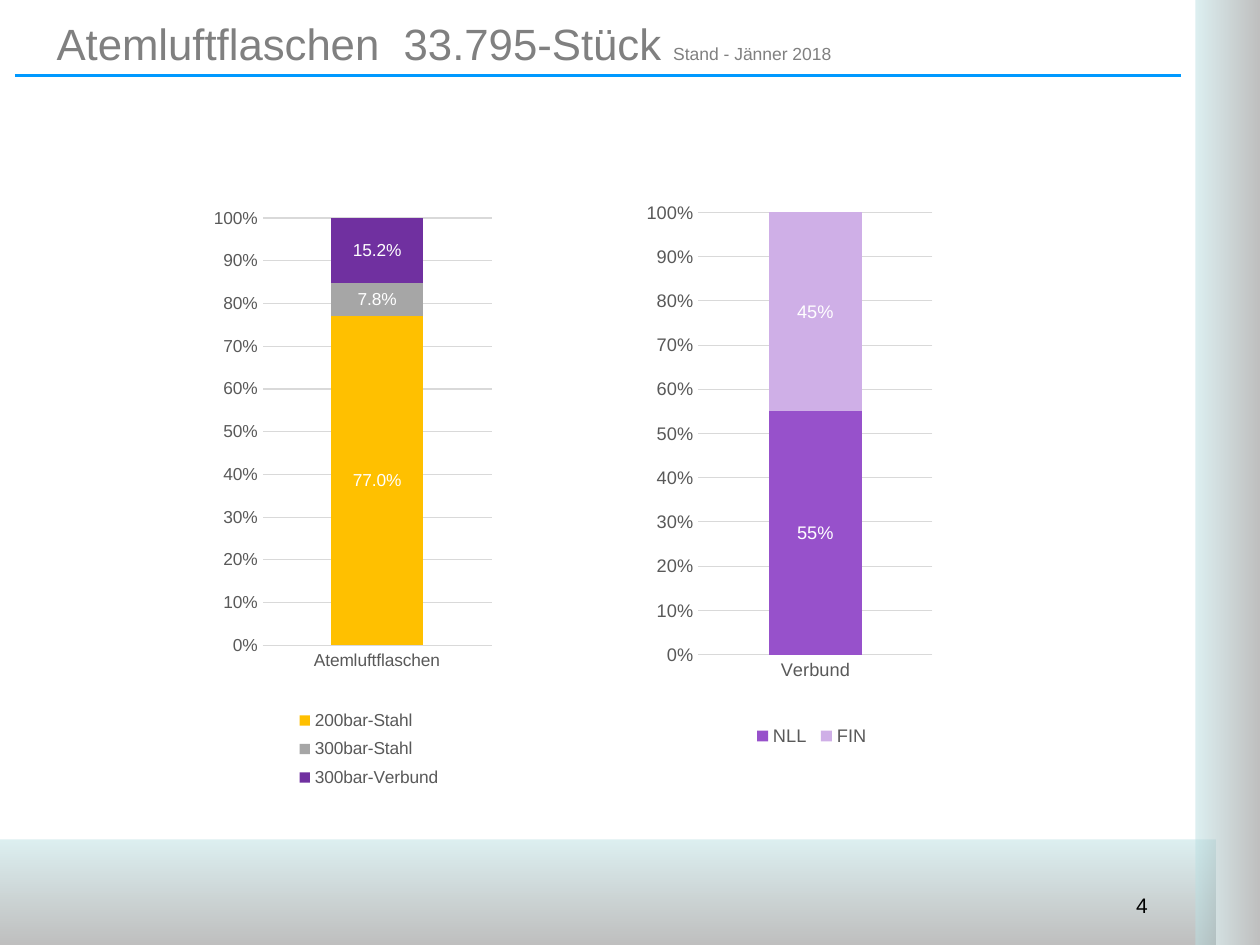
from lxml import etree
from pptx import Presentation, util as u
from pptx.chart.data import CategoryChartData
from pptx.dml.color import RGBColor
from pptx.enum import chart as ch, shapes, text
from pptx.oxml import parse_xml
from pptx.oxml.ns import nsdecls, qn

COLORS = {
    "mist": "BBE0E3", "gray": "808080", "blue": "0099FF", "black": "000000",
    "white": "FFFFFF", "label": "595959", "grid": "D9D9D9",
    "yellow": "FFC000", "silver": "A6A6A6", "purple": "7030A0",
    "violet": "9751CB", "lilac": "CFAFE7",
}


def rgb(name):
    return RGBColor.from_string(COLORS[name])


def layout_xml(x, y, w, h, inner=False):
    target = '<c:layoutTarget val="inner"/>' if inner else ""
    return parse_xml(
        f'<c:layout {nsdecls("c")}><c:manualLayout>{target}'
        '<c:xMode val="edge"/><c:yMode val="edge"/>'
        f'<c:x val="{x}"/><c:y val="{y}"/><c:w val="{w}"/><c:h val="{h}"/>'
        "</c:manualLayout></c:layout>")


def place(element, layout, index):
    for old in element.findall(qn("c:layout")):
        element.remove(old)
    element.insert(index, layout)


class SlideBuilder:
    """Holds the style and the current slide; boxes are given in cm."""

    font_name = "Arial"

    def __init__(self, slide):
        self.s = slide

    def style(self, font, size, color):
        font.name, font.size = self.font_name, u.Pt(size)
        font.color.rgb = rgb(color)

    def band(self, box, angle):
        sp = self.s.shapes.add_shape(shapes.MSO_SHAPE.RECTANGLE, *map(u.Cm, box))
        sp.shadow.inherit = False
        sp.line.fill.background()
        sp.fill.gradient()
        sp.fill.gradient_angle = angle
        for stop, color in zip(sp.fill.gradient_stops, ("mist", "gray")):
            stop.color.rgb = rgb(color)
        for clr in sp._element.spPr.iter(qn("a:srgbClr")):
            etree.SubElement(clr, qn("a:alpha")).set("val", "49000")

    def text(self, box, runs, color, align=text.PP_ALIGN.LEFT,
             anchor=text.MSO_ANCHOR.TOP):
        tf = self.s.shapes.add_textbox(*map(u.Cm, box)).text_frame
        tf.word_wrap = True
        tf.vertical_anchor = anchor
        p = tf.paragraphs[0]
        p.alignment = align
        for words, size in runs:
            r = p.add_run()
            r.text = words
            self.style(r.font, size, color)

    def rule(self, x1, x2, y, color, width):
        line = self.s.shapes.add_connector(
            shapes.MSO_CONNECTOR.STRAIGHT, u.Cm(x1), u.Cm(y), u.Cm(x2), u.Cm(y))
        line.line.color.rgb = rgb(color)
        line.line.width = u.Pt(width)
        etree.SubElement(line._element.spPr, qn("a:effectLst"))

    def chart(self, box, category, series, size, label_format, plot_box, legend_box):
        data = CategoryChartData(number_format=label_format)
        data.categories = [category]
        for name, value, _ in series:
            data.add_series(name, [value])
        chart = self.s.shapes.add_chart(
            ch.XL_CHART_TYPE.COLUMN_STACKED_100, *map(u.Cm, box), data).chart
        self.style(chart.font, size, "label")
        chart.has_title = False

        # Axes
        cat, val = chart.category_axis, chart.value_axis
        for axis in (cat, val):
            axis.major_tick_mark = axis.minor_tick_mark = ch.XL_TICK_MARK.NONE
            self.style(axis.tick_labels.font, size, "label")
        val.minimum_scale, val.maximum_scale, val.major_unit = 0, 1, 0.1
        val.tick_labels.number_format = "0%"
        val.tick_labels.number_format_is_linked = False
        val.format.line.fill.background()
        for line in (cat.format.line, val.major_gridlines.format.line):
            line.color.rgb = rgb("grid")
            line.width = u.Pt(0.65)

        # Columns and their values
        plot = chart.plots[0]
        plot.gap_width, plot.overlap, plot.vary_by_categories = 150, 100, False
        for ser, (_, _, color) in zip(plot.series, series):
            ser.format.fill.solid()
            ser.format.fill.fore_color.rgb = rgb(color)
            labels = ser.data_labels
            labels.show_value = True
            labels.number_format = label_format
            labels.number_format_is_linked = False
            self.style(labels.font, size, "white")

        # Legend and positions
        chart.has_legend = True
        legend = chart.legend
        legend.position = ch.XL_LEGEND_POSITION.BOTTOM
        legend.include_in_layout = False
        self.style(legend.font, size, "label")
        place(legend._element, layout_xml(*legend_box), 1)
        plot_area = chart._chartSpace.chart.plotArea
        place(plot_area, layout_xml(*plot_box, inner=True), 0)


def main():
    prs = Presentation()
    prs.slide_width, prs.slide_height = u.Cm(25.4), u.Cm(19.05)
    b = SlideBuilder(prs.slides.add_slide(prs.slide_layouts[6]))

    # Gradient bands at the bottom and the right
    b.band((0, 16.92, 24.51, 2.13), 270)
    b.band((24.1, 0, 1.3, 19.05), 0)

    # Page number, title and rule
    b.text((21.59, 17.86, 1.8, 0.79), [("4", 12)], "black", text.PP_ALIGN.RIGHT)
    b.text((0.89, 0, 21.97, 1.73),
           [("Atemluftflaschen  33.795-Stück ", 25), ("Stand - Jänner 2018", 10)],
           "gray", anchor=text.MSO_ANCHOR.MIDDLE)
    b.rule(0.3, 23.8, 1.52, "blue", 2)

    # Composite cylinders by type
    b.chart((12.12, 3.76, 7.26, 13.11), "Verbund",
            [("NLL", 0.55, "violet"), ("FIN", 0.45, "lilac")],
            10.4, "0%", (0.27, 0.04, 0.65, 0.68), (0.41, 0.82, 0.35, 0.05))

    # All cylinders by material and pressure
    b.chart((3.51, 3.89, 6.6, 12.67), "Atemluftflaschen",
            [("200bar-Stahl", 0.77, "yellow"), ("300bar-Stahl", 0.078, "silver"),
             ("300bar-Verbund", 0.152, "purple")],
            9.9, "0.0%", (0.27, 0.04, 0.7, 0.68), (0.36, 0.81, 0.47, 0.15))

    prs.save("out.pptx")


if __name__ == "__main__":
    main()
